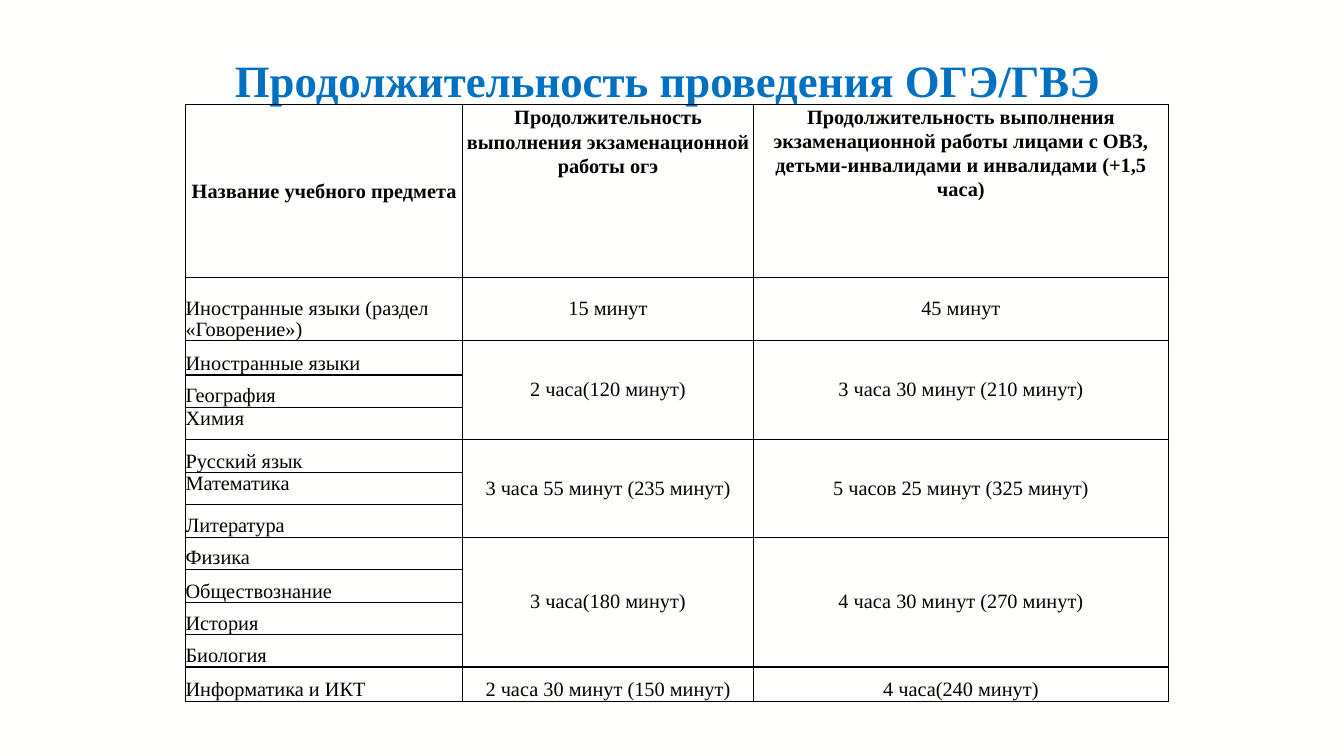
"""Build the slide with the table of exam durations."""
from lxml import etree
from pptx import Presentation
from pptx import util as u
from pptx.dml.color import RGBColor
from pptx.enum import text
from pptx.oxml.ns import qn

TITLE = "Продолжительность проведения ОГЭ/ГВЭ"
HEADINGS = [
    ("Название учебного предмета", "m", 1.05),
    ("Продолжительность выполнения экзаменационной работы огэ", "t", 1.08),
    ("Продолжительность выполнения экзаменационной работы лицами с ОВЗ, "
     "детьми-инвалидами и инвалидами (+1,5 часа)", "t", 1.07),
]
EXAM_GROUPS = [
    (["Иностранные языки (раздел «Говорение»)"], "15 минут", "45 минут", "m"),
    (["Иностранные языки", "География", "Химия"],
     "2 часа(120 минут)", "3 часа 30 минут (210 минут)", "m"),
    (["Русский язык", "Математика", "Литература"],
     "3 часа 55 минут (235 минут)", "5 часов 25 минут (325 минут)", "m"),
    (["Физика", "Обществознание", "История", "Биология"],
     "3 часа(180 минут)", "4 часа 30 минут (270 минут)", "m"),
    (["Информатика и ИКТ"], "2 часа 30 минут (150 минут)", "4 часа(240 минут)", "b"),
]
TOP_ALIGNED = {"Химия", "Математика"}
COLUMN_WIDTHS = [2.75, 2.88, 4.12]
ROW_HEIGHTS = [1.71, 0.63, 0.34, 0.32, 0.32, 0.33, 0.32, 0.32, 0.32, 0.33, 0.32, 0.32, 0.34]

FONT = "Times New Roman"
BLUE = RGBColor(0x00, 0x70, 0xC0)
BLACK = RGBColor(0, 0, 0)
WHITE = RGBColor(0xFF, 0xFF, 0xFF)
PAPER = RGBColor(0xFF, 0xFF, 0xFE)
ANCHORS = {"t": text.MSO_ANCHOR.TOP, "m": text.MSO_ANCHOR.MIDDLE, "b": text.MSO_ANCHOR.BOTTOM}
LEFT, CENTER = text.PP_ALIGN.LEFT, text.PP_ALIGN.CENTER
NO_MARGINS = dict(margin_left=0, margin_right=0, margin_top=0, margin_bottom=0)


def apply(target, values):
    for name, value in values.items():
        setattr(target, name, value)


def write(paragraph, words, size, color, bold):
    run = paragraph.add_run()
    run.text = words
    apply(run.font, dict(name=FONT, size=u.Pt(size), bold=bold))
    run.font.color.rgb = color


def fill_cell(cell, words, anchor, align, spacing=1.0, bold=False):
    cell.vertical_anchor = ANCHORS[anchor]
    paragraph = cell.text_frame.paragraphs[0]
    apply(paragraph, dict(alignment=align, line_spacing=spacing))
    write(paragraph, words, 14.5, BLACK, bold)


def frame_cell(cell):
    apply(cell, NO_MARGINS)
    properties = cell._tc.get_or_add_tcPr()
    for side in ("a:lnL", "a:lnR", "a:lnT", "a:lnB"):
        border = etree.SubElement(properties, qn(side), w=str(u.Pt(1)))
        ink = etree.SubElement(border, qn("a:solidFill"))
        etree.SubElement(ink, qn("a:srgbClr"), val=str(BLACK))
    cell.fill.background()


def add_title(slide):
    title = slide.shapes.add_textbox(*map(u.Inches, (2.33, 0.47, 8.6, 0.44)))
    title.fill.solid()
    title.fill.fore_color.rgb = WHITE
    apply(title.text_frame, NO_MARGINS | dict(margin_top=u.Inches(0.05), word_wrap=False))
    write(title.text_frame.paragraphs[0], TITLE, 32, BLUE, True)


def add_durations(slide):
    place = map(u.Inches, (1.84, 1.04, sum(COLUMN_WIDTHS), sum(ROW_HEIGHTS)))
    durations = slide.shapes.add_table(len(ROW_HEIGHTS), len(COLUMN_WIDTHS), *place).table
    apply(durations, dict(first_row=False, horz_banding=False))
    for column, width in zip(durations.columns, COLUMN_WIDTHS):
        column.width = u.Inches(width)
    for row, height in zip(durations.rows, ROW_HEIGHTS):
        row.height = u.Inches(height)
    for cell in durations.iter_cells():
        frame_cell(cell)

    for column, (heading, anchor, spacing) in enumerate(HEADINGS):
        fill_cell(durations.cell(0, column), heading, anchor, CENTER, spacing, True)
    first = 1
    for subjects, regular, extended, anchor in EXAM_GROUPS:
        last = first + len(subjects) - 1
        for row, subject in enumerate(subjects, first):
            subject_anchor = "t" if subject in TOP_ALIGNED else "b"
            fill_cell(durations.cell(row, 0), subject, subject_anchor, LEFT,
                      0.92 if row == 1 else 1.0)
        for column, duration in enumerate((regular, extended), 1):
            cell = durations.cell(first, column)
            if last > first:
                cell.merge(durations.cell(last, column))
            fill_cell(cell, duration, anchor, CENTER)
        first = last + 1


def main():
    deck = Presentation()
    apply(deck, dict(slide_width=u.Inches(13.33), slide_height=u.Inches(7.5)))
    slide = deck.slides.add_slide(deck.slide_layouts[6])
    slide.background.fill.solid()
    slide.background.fill.fore_color.rgb = PAPER
    add_title(slide)
    add_durations(slide)
    deck.save("out.pptx")


if __name__ == "__main__":
    main()
